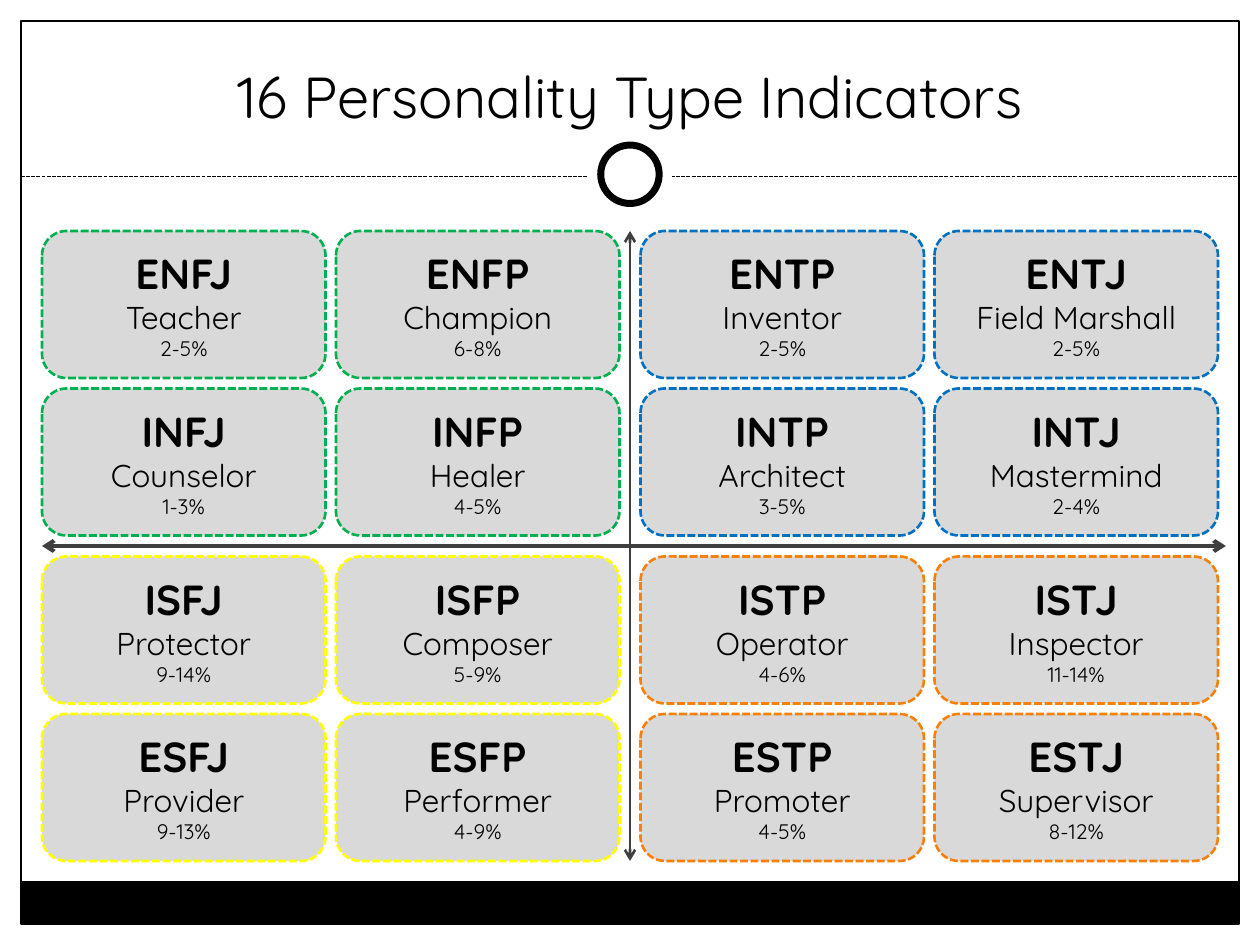
"""Build the slide of sixteen personality types in four quadrants."""
from lxml import etree
from pptx import Presentation
from pptx.dml.color import RGBColor
from pptx.enum import dml, shapes, text
from pptx.oxml import ns
from pptx.util import Pt

BLACK = RGBColor(0x00, 0x00, 0x00)
WHITE = RGBColor(0xFF, 0xFF, 0xFF)
GRAY = RGBColor(0xD9, 0xD9, 0xD9)
DARK = RGBColor(0x3F, 0x3F, 0x3F)
GREEN = RGBColor(0x00, 0xB0, 0x50)
BLUE = RGBColor(0x00, 0x70, 0xC0)
YELLOW = RGBColor(0xFF, 0xFF, 0x00)
ORANGE = RGBColor(0xF7, 0x80, 0x09)
FONT = "Quicksand"
DASH = dml.MSO_LINE.SQUARE_DOT
KIND = shapes.MSO_SHAPE

deck = Presentation()
deck.slide_width, deck.slide_height = Pt(720), Pt(540)
slide = deck.slides.add_slide(deck.slide_layouts[5])


def draw(kind, box, fill=None, color=None, width=0.75):
    shape = slide.shapes.add_shape(kind, *map(Pt, box))
    shape.shadow.inherit = False
    if fill is None:
        shape.fill.background()
    else:
        shape.fill.solid()
        shape.fill.fore_color.rgb = fill
    if color is None:
        shape.line.fill.background()
    else:
        shape.line.color.rgb = color
        shape.line.width = Pt(width)
    return shape


def rule(ends, color, width):
    link = slide.shapes.add_connector(shapes.MSO_CONNECTOR.STRAIGHT, *map(Pt, ends))
    link.line.color.rgb = color
    link.line.width = Pt(width)
    etree.SubElement(link._element.spPr, ns.qn("a:effectLst"))
    return link


draw(KIND.RECTANGLE, (12, 503.5, 696, 24.5), BLACK)
draw(KIND.RECTANGLE, (12, 12, 696, 516), color=BLACK)
rule((12, 100.8, 708, 100.8), BLACK, 0.75).line.dash_style = DASH
draw(KIND.OVAL, (336, 75.6, 48, 48), WHITE)
draw(KIND.OVAL, (343.3, 82.9, 33.4, 33.4), WHITE, BLACK, 4)

title = slide.shapes.title
title.left, title.top, title.width, title.height = map(Pt, (24, 18, 672, 60))
frame = title.text_frame
frame.text = "16 Personality Type Indicators"
frame.auto_size = text.MSO_AUTO_SIZE.NONE
frame.vertical_anchor = text.MSO_ANCHOR.BOTTOM
head = frame.paragraphs[0]
head.alignment = text.PP_ALIGN.CENTER
head.font.name, head.font.size = FONT, Pt(33)
head.font.color.rgb = BLACK

types = [
    [("ENFJ", "Teacher", "2-5%"), ("ENFP", "Champion", "6-8%"),
     ("ENTP", "Inventor", "2-5%"), ("ENTJ", "Field Marshall", "2-5%")],
    [("INFJ", "Counselor", "1-3%"), ("INFP", "Healer", "4-5%"),
     ("INTP", "Architect", "3-5%"), ("INTJ", "Mastermind", "2-4%")],
    [("ISFJ", "Protector", "9-14%"), ("ISFP", "Composer", "5-9%"),
     ("ISTP", "Operator", "4-6%"), ("ISTJ", "Inspector", "11-14%")],
    [("ESFJ", "Provider", "9-13%"), ("ESFP", "Performer", "4-9%"),
     ("ESTP", "Promoter", "4-5%"), ("ESTJ", "Supervisor", "8-12%")],
]
hues = [[GREEN, BLUE], [YELLOW, ORANGE]]

for row, line in enumerate(types):
    for col, words in enumerate(line):
        left = 24 + 168 * col + 6 * (col // 2)
        top = 132 + 90 * row + 6 * (row // 2)
        card = draw(KIND.ROUNDED_RECTANGLE, (left, top, 162, 84),
                    GRAY, hues[row // 2][col // 2], 1.5)
        card.line.dash_style = DASH
        frame = card.text_frame
        frame.text = "\n".join(words)
        frame.vertical_anchor = text.MSO_ANCHOR.MIDDLE
        for para, size in zip(frame.paragraphs, (24, 18, 12)):
            para.alignment = text.PP_ALIGN.CENTER
            para.font.name, para.font.size = FONT, Pt(size)
            para.font.bold = size == 24
            para.font.color.rgb = BLACK

for ends, width in (((360, 132, 360, 492), 1.5), ((24, 312, 700.5, 312), 2.25)):
    axis = rule(ends, DARK, width)
    for tip in ("a:headEnd", "a:tailEnd"):
        etree.SubElement(axis.line._get_or_add_ln(), ns.qn(tip), type="arrow")

deck.save("out.pptx")
